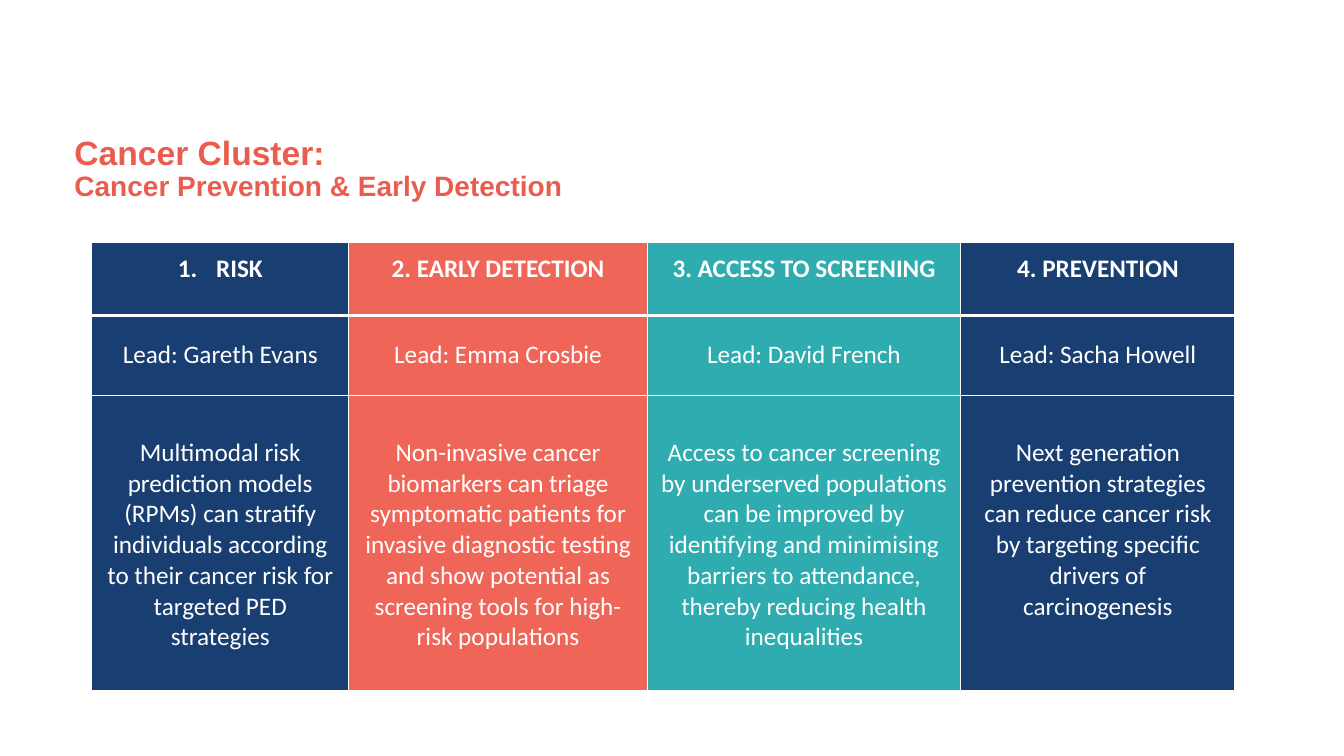
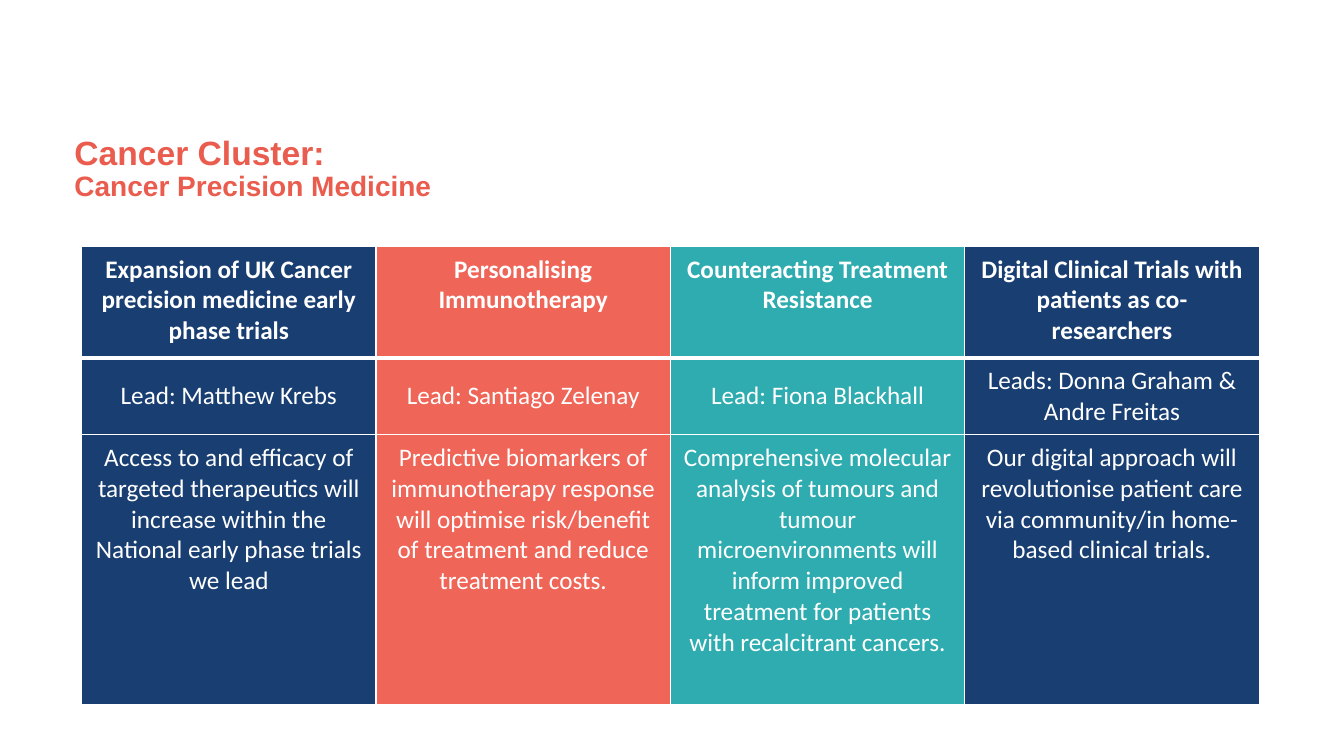
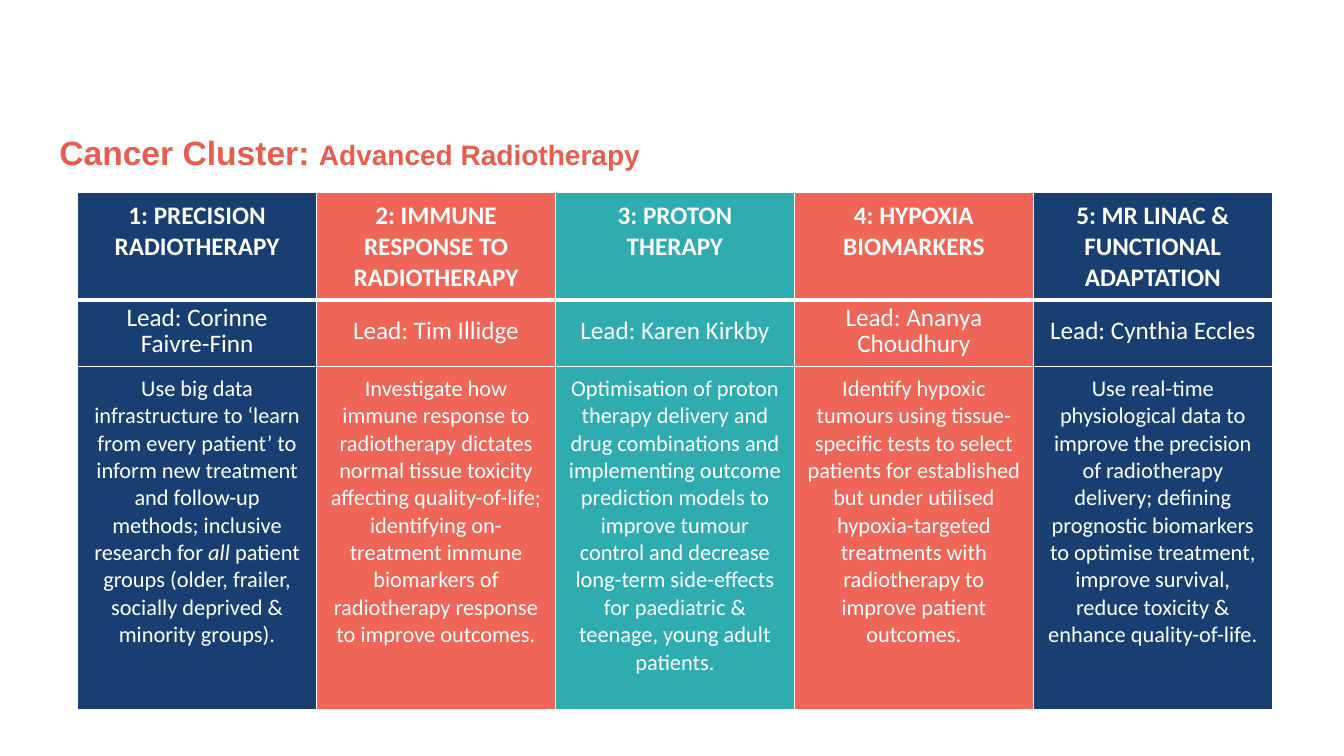
from dataclasses import dataclass

from lxml import etree
from pptx import Presentation
from pptx.dml.color import RGBColor
from pptx.enum.text import MSO_ANCHOR, PP_ALIGN
from pptx.oxml.ns import qn
from pptx.util import Emu, Pt

TOP, MIDDLE = MSO_ANCHOR.TOP, MSO_ANCHOR.MIDDLE
CENTER = PP_ALIGN.CENTER
EMU_PER_PX = 9144


@dataclass(frozen=True)
class Theme:
    white: str = "FFFFFF"
    navy: str = "193E72"
    coral: str = "EF6557"
    teal: str = "2EACB0"
    title: str = "EA5D4E"
    title_font: str = "Arial"
    table_font: str = "Calibri"
    title_size: int = 24
    subtitle_size: int = 20
    table_size: int = 18
    small_size: int = 16
    thin: int = 1
    thick: int = 3


T = Theme()


def px(n):
    return Emu(n * EMU_PER_PX)


def set_attrs(obj, values):
    for name, value in values.items():
        setattr(obj, name, value)


def add_run(p, text, color, **fmt):
    r = p.add_run()
    r.text = text
    set_attrs(r.font, fmt)
    r.font.color.rgb = RGBColor.from_string(color)


def add_title(slide, box, subtitle, stacked):
    sp = slide.shapes.add_textbox(*map(px, box))
    tf = sp.text_frame
    set_attrs(tf, {"word_wrap": True, "vertical_anchor": MIDDLE})
    p = tf.paragraphs[0]
    p.line_spacing = 0.9
    fmt = {"name": T.title_font, "bold": True}
    heading = "Cancer Cluster:" if stacked else "Cancer Cluster: "
    add_run(p, heading, T.title, size=Pt(T.title_size), **fmt)
    if stacked:
        p.add_line_break()
    add_run(p, subtitle, T.title, size=Pt(T.subtitle_size), **fmt)


def set_borders(cell, **widths):
    tcPr = cell._tc.get_or_add_tcPr()
    for side in "LRTB":
        width = Pt(widths.get(side, T.thin))
        ln = etree.SubElement(tcPr, qn(f"a:ln{side}"), w=str(width))
        fill = etree.SubElement(ln, qn("a:solidFill"))
        etree.SubElement(fill, qn("a:srgbClr"), val=T.white)


def number_paragraph(p, indent):
    pPr = p._p.get_or_add_pPr()
    pPr.set("marL", str(px(indent)))
    pPr.set("indent", str(px(-indent)))
    etree.SubElement(pPr, qn("a:buAutoNum"), type="arabicPeriod")


def fill_cell(cell, parts, color, size, margins, anchor, borders, bold, spacing):
    left, top, right, bottom = map(px, margins)
    set_attrs(cell, {"margin_left": left, "margin_top": top, "margin_right": right,
                     "margin_bottom": bottom, "vertical_anchor": anchor})
    set_borders(cell, **borders)
    cell.fill.solid()
    cell.fill.fore_color.rgb = RGBColor.from_string(color)
    p = cell.text_frame.paragraphs[0]
    set_attrs(p, {"alignment": CENTER, "line_spacing": spacing})
    for i, text in enumerate([parts] if isinstance(parts, str) else parts):
        add_run(p, text, T.white, name=T.table_font, size=Pt(size),
                bold=bold, italic=i % 2 == 1)
    return p


def add_themes(slide, at, widths, heights, themes, colors, pad=8, body_pad=8,
               body_size=T.table_size, lead_spacing=None, numbered=False):
    frame = slide.shapes.add_table(len(heights), len(widths), *map(px, at),
                                   px(sum(widths)), px(sum(heights)))
    table = frame.table
    set_attrs(table, {"first_row": False, "horz_banding": False})
    for column, width in zip(table.columns, widths):
        column.width = px(width)
    for row, height in zip(table.rows, heights):
        row.height = px(height)
    rows = [
        {"size": T.table_size, "margins": (12, pad, 12, pad), "anchor": TOP,
         "borders": {"B": T.thick}, "bold": True, "spacing": None},
        {"size": T.table_size, "margins": (12, pad, 12, pad), "anchor": MIDDLE,
         "borders": {"T": T.thick}, "bold": False, "spacing": lead_spacing},
        {"size": body_size, "margins": (12, body_pad, 12, pad), "anchor": TOP,
         "borders": {}, "bold": False, "spacing": None},
    ]
    for c, (theme, color) in enumerate(zip(themes, colors)):
        for r, (parts, fmt) in enumerate(zip(theme, rows)):
            p = fill_cell(table.cell(r, c), parts, color, **fmt)
            if numbered and r == c == 0:
                number_paragraph(p, 38)


PREVENTION = [
    ("RISK", "Lead: Gareth Evans",
     "Multimodal risk prediction models (RPMs) can stratify individuals according "
     "to their cancer risk for targeted PED strategies"),
    ("2. EARLY DETECTION", "Lead: Emma Crosbie",
     "Non-invasive cancer biomarkers can triage symptomatic patients for invasive "
     "diagnostic testing and show potential as screening tools for high-risk populations"),
    ("3. ACCESS TO SCREENING", "Lead: David French",
     "Access to cancer screening by underserved populations can be improved by "
     "identifying and minimising barriers to attendance, thereby reducing health "
     "inequalities"),
    ("4. PREVENTION", "Lead: Sacha Howell",
     "Next generation prevention strategies can reduce cancer risk by targeting "
     "specific drivers of carcinogenesis"),
]
PRECISION = [
    ("Expansion of UK Cancer precision medicine early phase trials",
     "Lead: Matthew Krebs",
     "Access to and efficacy of targeted therapeutics will increase within the "
     "National early phase trials we lead"),
    ("Personalising Immunotherapy", "Lead: Santiago Zelenay",
     "Predictive biomarkers of immunotherapy response will optimise risk/benefit of "
     "treatment and reduce treatment costs."),
    ("Counteracting Treatment Resistance", "Lead: Fiona Blackhall",
     "Comprehensive molecular analysis of tumours and tumour microenvironments will "
     "inform improved treatment for patients with recalcitrant cancers."),
    ("Digital Clinical Trials with patients as co-researchers",
     "Leads: Donna Graham & Andre Freitas",
     "Our digital approach will revolutionise patient care via community/in "
     "home-based clinical trials."),
]
RADIOTHERAPY = [
    ("1: PRECISION RADIOTHERAPY", "Lead: Corinne Faivre-Finn",
     ("Use big data infrastructure to ‘learn from every patient’ to inform new "
      "treatment and follow-up methods; inclusive research for ", "all",
      " patient groups (older, frailer, socially deprived & minority groups).")),
    ("2: IMMUNE RESPONSE TO RADIOTHERAPY", "Lead: Tim Illidge",
     "Investigate how immune response to radiotherapy dictates normal tissue toxicity "
     "affecting quality-of-life; identifying on-treatment immune biomarkers of "
     "radiotherapy response to improve outcomes."),
    ("3: PROTON THERAPY", "Lead: Karen Kirkby",
     "Optimisation of proton therapy delivery and drug combinations and implementing "
     "outcome prediction models to improve tumour control and decrease long-term "
     "side-effects for paediatric & teenage, young adult patients."),
    ("4: HYPOXIA BIOMARKERS", "Lead: Ananya Choudhury",
     "Identify hypoxic tumours using tissue-specific tests to select patients for "
     "established but under utilised hypoxia-targeted treatments with radiotherapy "
     "to improve patient outcomes."),
    ("5: MR LINAC & FUNCTIONAL ADAPTATION", "Lead: Cynthia Eccles",
     "Use real-time physiological data to improve the precision of radiotherapy "
     "delivery; defining prognostic biomarkers to optimise treatment, improve "
     "survival, reduce toxicity & enhance quality-of-life."),
]
STACKED_BOX = (64, 120, 973, 96)
INLINE_BOX = (49, 115, 973, 76)
FOUR_COLORS = (T.navy, T.coral, T.teal, T.navy)
FIVE_COLORS = (T.navy, T.coral, T.teal, T.coral, T.navy)


def main():
    prs = Presentation()
    set_attrs(prs, {"slide_width": px(1333), "slide_height": px(750)})
    clusters = [
        ((STACKED_BOX, "Cancer Prevention & Early Detection", True),
         {"at": (91, 240), "widths": (255, 296, 311, 272), "heights": (73, 79, 293),
          "themes": PREVENTION, "colors": FOUR_COLORS, "pad": 12, "body_pad": 42,
          "numbered": True}),
        ((STACKED_BOX, "Cancer Precision Medicine", True),
         {"at": (81, 244), "widths": [292] * 4, "heights": (111, 76, 268),
          "themes": PRECISION, "colors": FOUR_COLORS}),
        ((INLINE_BOX, "Advanced Radiotherapy", False),
         {"at": (77, 191), "widths": [237] * 5, "heights": (107, 66, 340),
          "themes": RADIOTHERAPY, "colors": FIVE_COLORS,
          "body_size": T.small_size, "lead_spacing": Pt(18)}),
    ]
    for title, table in clusters:
        slide = prs.slides.add_slide(prs.slide_layouts[6])
        add_title(slide, *title)
        add_themes(slide, **table)
    prs.save("out.pptx")


if __name__ == "__main__":
    main()
